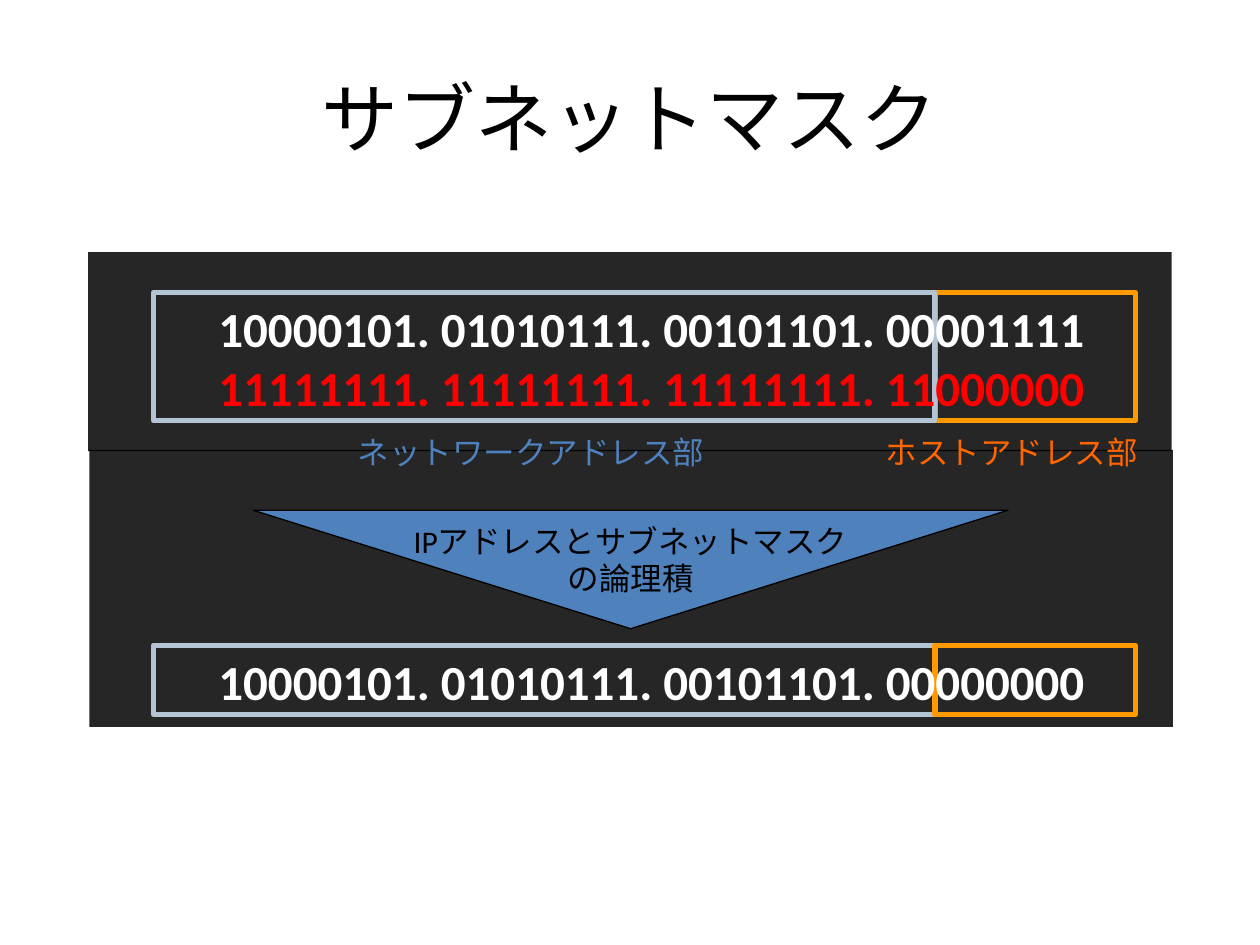
from pptx import Presentation
from pptx.dml.color import RGBColor as Color
from pptx.enum.shapes import MSO_SHAPE as Preset
from pptx.enum.text import MSO_ANCHOR as Anchor, PP_ALIGN as Align
from pptx.oxml.ns import qn
from pptx.util import Inches, Pt
from lxml.etree import SubElement

COLORS = {"black": "000000", "white": "FFFFFF", "red": "FF0000", "blue": "4F81BD",
          "network": "B4C4D4", "host": "FF9900", "host_label": "FF6600"}
WIDTH, HEIGHT = Inches(10), Inches(7.5)
COLUMNS, ROWS = 100, 75


class SlideBuilder:
    font = "Calibri"

    def __init__(self, deck):
        self.page = deck.slides.add_slide(deck.slide_layouts[5])

    def place(self, left, top, width, height):
        return [round(size * share) for size, share in (
            (WIDTH, left / COLUMNS), (HEIGHT, top / ROWS),
            (WIDTH, width / COLUMNS), (HEIGHT, height / ROWS))]

    def color(self, name):
        return Color.from_string(COLORS[name])

    def fill_text(self, frame, lines, color, size, bold=False):
        style = {"name": self.font, "size": Pt(size), "bold": bold}
        for index, line in enumerate(lines):
            para = frame.paragraphs[0] if index == 0 else frame.add_paragraph()
            para.alignment = Align.CENTER
            span = para.add_run()
            span.text = line
            for key, value in style.items():
                setattr(span.font, key, value)
            span.font.color.rgb = self.color(color)

    def title(self, area, text):
        box = self.page.shapes.title
        box.left, box.top, box.width, box.height = self.place(*area)
        box.text_frame.vertical_anchor = Anchor.MIDDLE
        self.fill_text(box.text_frame, [text], "black", 44)

    def shape(self, area, preset=Preset.RECTANGLE, fill=None, line=None, weight=3, alpha=None):
        shape = self.page.shapes.add_shape(preset, *self.place(*area))
        shape.shadow.inherit = False
        if fill:
            shape.fill.solid()
            shape.fill.fore_color.rgb = self.color(fill)
        else:
            shape.fill.background()
        if alpha:
            tint = next(shape._element.spPr.iter(qn("a:srgbClr")))
            SubElement(tint, qn("a:alpha")).set("val", str(alpha * 1000))
        if line:
            shape.line.color.rgb = self.color(line)
            shape.line.width = Pt(weight)
        else:
            shape.line.fill.background()
        return shape

    def text(self, area, line, color, size, bold=False):
        box = self.page.shapes.add_textbox(*self.place(*area))
        box.text_frame.word_wrap = True
        self.fill_text(box.text_frame, [line], color, size, bold)

    def merge_arrow(self, area, lines):
        shape = self.shape(area, Preset.FLOWCHART_MERGE, "blue", "black", 0.75)
        frame = shape.text_frame
        frame.word_wrap = False
        frame.vertical_anchor = Anchor.TOP
        frame.margin_top = Inches(0.09)
        self.fill_text(frame, lines, "black", 18)


def main():
    deck = Presentation()
    deck.slide_width, deck.slide_height = WIDTH, HEIGHT
    slide = SlideBuilder(deck)
    slide.title((5, 3, 90, 12.5), "サブネットマスク")

    for panel in ((7, 20, 86, 15.8), (7.1, 35.7, 86, 22)):
        slide.shape(panel, fill="black", alpha=85)

    left, split, right = 12.2, 74.2, 90.1
    parts = {"network": (left, split - left), "host": (split, right - split)}
    for top, height, order in ((23.2, 10.2, ("host", "network")),
                               (51.2, 5.5, ("network", "host"))):
        for part in order:
            start, width = parts[part]
            slide.shape((start, top, width, height), line=part)

    slide.merge_arrow((20.1, 40.5, 59.9, 9.4), ["IPアドレスとサブネットマスク", "の論理積"])

    for top, bits, color in (
            (23.2, "10000101. 01010111. 00101101. 00001111", "white"),
            (27.9, "11111111. 11111111. 11111111. 11000000", "red"),
            (51.2, "10000101. 01010111. 00101101. 00000000", "white")):
        slide.text((left, top, 79, 5.7), bits, color, 28, bold=True)

    for start, width, label, color in (
            (24.8, 34.7, "ネットワークアドレス部", "blue"),
            (67.3, 26, "ホストアドレス部", "host_label")):
        slide.text((start, 33.9, width, 5), label, color, 18)

    deck.save("out.pptx")


if __name__ == "__main__":
    main()
